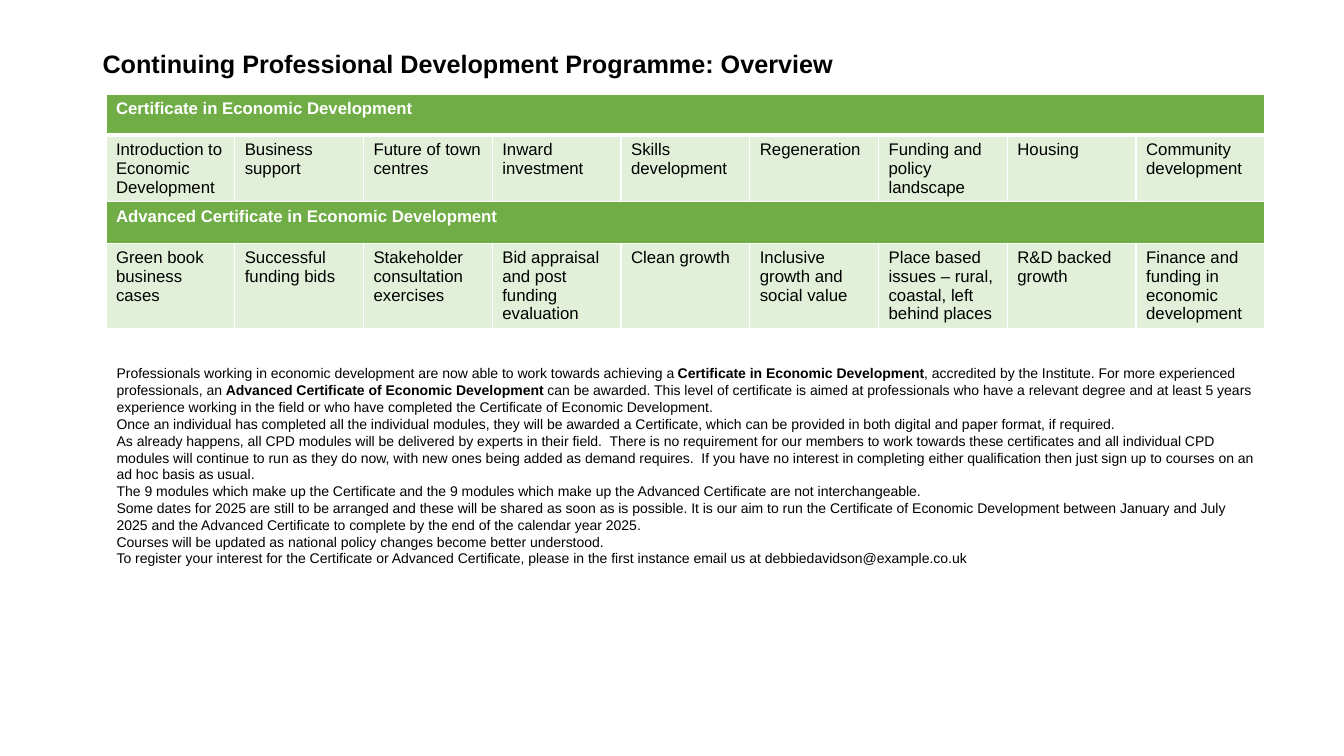
import lxml.etree
import pptx
import pptx.dml.color
import pptx.enum.text
import pptx.oxml.ns
import pptx.util
from pptx.util import Cm

BLACK = pptx.dml.color.RGBColor(0x00, 0x00, 0x00)
WHITE = pptx.dml.color.RGBColor(0xFF, 0xFF, 0xFF)
GREEN = pptx.dml.color.RGBColor(0x70, 0xAD, 0x47)
PALE_GREEN = pptx.dml.color.RGBColor(0xE2, 0xF0, 0xD9)
FONT = "Arial"

TITLE = "Continuing Professional Development Programme: Overview"
CERTIFICATES = [
    ("Certificate in Economic Development",
     ["Introduction to Economic Development", "Business support", "Future of town centres",
      "Inward investment", "Skills development", "Regeneration",
      "Funding and policy landscape", "Housing", "Community development"]),
    ("Advanced Certificate in Economic Development",
     ["Green book business cases", "Successful funding bids",
      "Stakeholder consultation exercises", "Bid appraisal and post funding evaluation",
      "Clean growth", "Inclusive growth and social value",
      "Place based issues – rural, coastal, left behind places", "R&D backed growth",
      "Finance and funding in economic development"]),
]
# Each paragraph is a list of pieces; every second piece is bold.
NOTES = [
    ["Professionals working in economic development are now able to work towards achieving a ",
     "Certificate in Economic Development",
     ", accredited by the Institute. For more experienced professionals, an ",
     "Advanced Certificate of Economic Development ",
     "can be awarded. This level of certificate is aimed at professionals who have a relevant "
     "degree and at least 5 years experience working in the field or who have completed the "
     "Certificate of Economic Development. "],
    ["Once an individual has completed all the individual modules, they will be awarded a "
     "Certificate, which can be provided in both digital and paper format, if required."],
    ["As already happens, all CPD modules will be delivered by experts in their field.  There is "
     "no requirement for our members to work towards these certificates and all individual CPD "
     "modules will continue to run as they do now, with new ones being added as demand "
     "requires.  If you have no interest in completing either qualification then just sign up "
     "to courses on an ad hoc basis as usual. "],
    ["The 9 modules which make up the Certificate and the 9 modules which make up the Advanced "
     "Certificate are not interchangeable."],
    ["Some dates for 2025 are still to be arranged and these will be shared as soon as is "
     "possible. It is our aim to run the Certificate of Economic Development between January "
     "and July 2025 and the Advanced Certificate to complete by the end of the calendar year "
     "2025."],
    ["Courses will be updated as national policy changes become better understood."],
    ["To register your interest for the Certificate or Advanced Certificate, please in the first "
     "instance email us at debbiedavidson@example.co.uk"],
]


def add_text(paragraph, text, size, color=BLACK, bold=False):
    run = paragraph.add_run()
    run.text = text
    run.font.name = FONT
    run.font.size = pptx.util.Pt(size)
    run.font.color.rgb = color
    run.font.bold = bold


def set_borders(cell, top=1, bottom=1):
    """Draw white cell borders; top and bottom are widths in points."""
    properties = cell._tc.get_or_add_tcPr()
    widths = {"a:lnL": 1, "a:lnR": 1, "a:lnT": top, "a:lnB": bottom}
    for position, (tag, width) in enumerate(widths.items()):
        line = lxml.etree.Element(pptx.oxml.ns.qn(tag), w=str(pptx.util.Pt(width)))
        fill = lxml.etree.SubElement(line, pptx.oxml.ns.qn("a:solidFill"))
        lxml.etree.SubElement(fill, pptx.oxml.ns.qn("a:srgbClr"), val=str(WHITE))
        properties.insert(position, line)


def fill_cell(cell, text, fill, **text_format):
    cell.fill.solid()
    cell.fill.fore_color.rgb = fill
    add_text(cell.text_frame.paragraphs[0], text, 12, **text_format)


def place_title(slide, left, top, width, height):
    title = slide.shapes.title
    title.left, title.top, title.width, title.height = left, top, width, height
    frame = title.text_frame
    frame.word_wrap = True
    frame.auto_size = pptx.enum.text.MSO_AUTO_SIZE.NONE
    frame.vertical_anchor = pptx.enum.text.MSO_ANCHOR.MIDDLE
    paragraph = frame.paragraphs[0]
    paragraph.alignment = pptx.enum.text.PP_ALIGN.LEFT
    paragraph.line_spacing = 0.9
    add_text(paragraph, TITLE, 18, bold=True)


def add_module_table(slide, left, top, width, height):
    """Give each certificate a merged heading row and a row of its modules."""
    column_count = len(CERTIFICATES[0][1])
    graphic_frame = slide.shapes.add_table(
        2 * len(CERTIFICATES), column_count, left, top, width, height)
    table = graphic_frame.table
    for row in table.rows:
        row.height = Cm(1.04)  # rows grow to fit their text
    graphic_frame.height = height
    for index, (heading, modules) in enumerate(CERTIFICATES):
        heading_row = 2 * index
        table.cell(heading_row, 0).merge(table.cell(heading_row, column_count - 1))
        fill_cell(table.cell(heading_row, 0), heading, GREEN, color=WHITE, bold=True)
        for column, module in enumerate(modules):
            fill_cell(table.cell(heading_row + 1, column), module, PALE_GREEN)
    for row_index, row in enumerate(table.rows):
        for cell in row.cells:
            set_borders(cell, top=3 if row_index == 1 else 1, bottom=3 if row_index == 0 else 1)


def add_notes_text(slide, left, top, width, height):
    frame = slide.shapes.add_textbox(left, top, width, height).text_frame
    frame.word_wrap = True
    frame.auto_size = pptx.enum.text.MSO_AUTO_SIZE.SHAPE_TO_FIT_TEXT
    for index, pieces in enumerate(NOTES):
        paragraph = frame.add_paragraph() if index else frame.paragraphs[0]
        for position, piece in enumerate(pieces):
            add_text(paragraph, piece, 10, bold=position % 2 == 1)


def main():
    presentation = pptx.Presentation()
    presentation.slide_width, presentation.slide_height = Cm(33.87), Cm(19.05)
    slide = presentation.slides.add_slide(presentation.slide_layouts.get_by_name("Title Only"))
    place_title(slide, Cm(2.33), Cm(1.02), Cm(29.21), Cm(1.27))
    add_module_table(slide, Cm(2.67), Cm(2.37), Cm(29.21), Cm(6.12))
    add_notes_text(slide, Cm(2.69), Cm(9.07), Cm(29.21), Cm(5.38))
    presentation.save("out.pptx")


if __name__ == "__main__":
    main()
